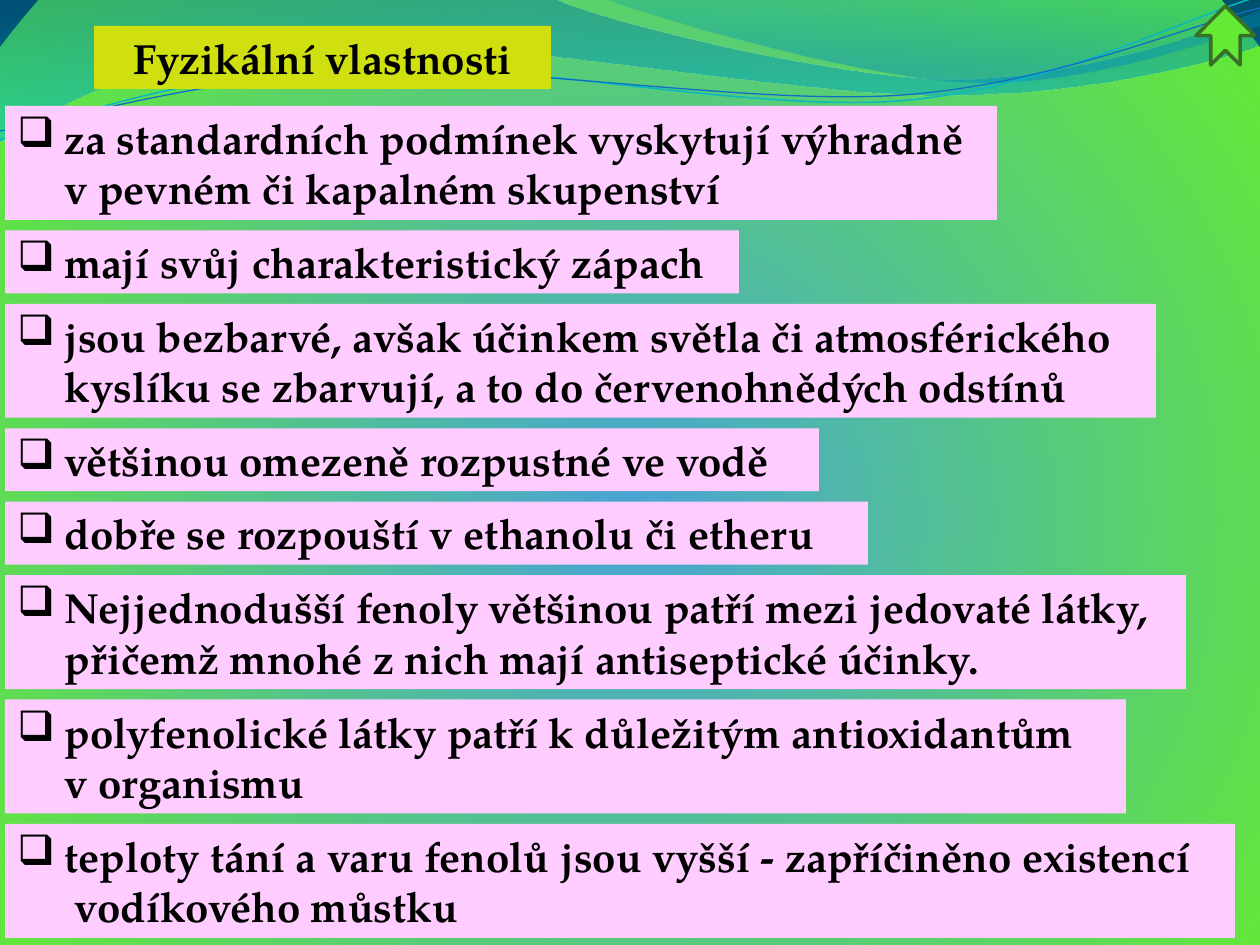
from typing import NamedTuple

from pptx import Presentation
from pptx.dml.color import RGBColor
from pptx.enum.shapes import MSO_SHAPE
from pptx.enum.text import MSO_ANCHOR, PP_ALIGN
from pptx.oxml import parse_xml
from pptx.oxml.ns import nsdecls, qn
from pptx.util import Pt

RECT, ARROW = MSO_SHAPE.RECTANGLE, MSO_SHAPE.NOTCHED_RIGHT_ARROW
LEFT, CENTER, MIDDLE = PP_ALIGN.LEFT, PP_ALIGN.CENTER, MSO_ANCHOR.MIDDLE
EMU_PER_PX = 914400 / 126
FONT, BULLET_FONT = "TeX Gyre Pagella", "OpenSymbol"
GREEN, PINK, YELLOW, BLACK = "64E935", "FFCCFF", "D0DF0F", "000000"
LIST_LEFT, LIST_TOP, LIST_BOTTOM = 5, 106, 938
LINE_HEIGHT, PADDING, INDENT = 51, 12, 47


class Stop(NamedTuple):
    position: int
    color: str
    opacity: int = 100


class Wave(NamedTuple):
    start: tuple
    segments: list  # one point is a straight line, three are a Bézier curve
    stops: tuple = ()
    line: str = ""
    weight: float = 0


class Property(NamedTuple):
    text: str
    width: int
    lines: int = 1

    @property
    def height(self) -> int:
        return self.lines * LINE_HEIGHT + PADDING


WAVES = [
    Wave((0, 0), [
        [(554, -1)],
        [(600, 21), (837, 79), (955, 79)],
        [(1075, 79), (1208, 33), (1260, 11)],
        [(1261, 45)],
        [(1239, 55), (1096, 96), (940, 95)],
        [(784, 95), (481, 35), (324, 43)],
        [(163, 45), (58, 105), (-1, 142)],
    ], stops=(Stop(0, "0074A1", 45), Stop(100, "00C6CF", 55))),
    Wave((604, -1), [
        [(641, 14), (859, 78), (969, 82)],
        [(1079, 87), (1211, 40), (1260, 26)],
        [(1260, 0)],
    ], stops=(Stop(0, "00A1A9", 30), Stop(80, "008BBF", 45))),
    Wave((0, 140), [
        [(60, 117), (199, 72), (349, 66)],
        [(498, 59), (747, 112), (898, 101)],
        [(1050, 89), (1182, 19), (1257, -3)],
    ], line="0AB8BF", weight=0.85),
    Wave((0, 131), [
        [(59, 121), (207, 77), (357, 71)],
        [(508, 64), (752, 106), (903, 95)],
        [(1053, 84), (1186, 26), (1260, 8)],
    ], line="0F6FC6", weight=0.75),
]

PROPERTIES = [
    Property("za standardních podmínek vyskytují výhradně \vv pevném či kapalném skupenství", 992, 2),
    Property("mají svůj charakteristický zápach", 734),
    Property("jsou bezbarvé, avšak účinkem světla či atmosférického "
             "kyslíku se zbarvují, a to do červenohnědých odstínů", 1151, 2),
    Property("většinou omezeně rozpustné ve vodě", 814),
    Property("dobře se rozpouští v ethanolu či etheru", 863),
    Property("Nejjednodušší fenoly většinou patří mezi jedovaté látky, "
             "přičemž mnohé z nich mají antiseptické účinky.", 1181, 2),
    Property("polyfenolické látky patří k důležitým antioxidantům \vv organismu", 1121, 2),
    Property("teploty tání a varu fenolů jsou vyšší - zapříčiněno existencí\v vodíkového můstku", 1230, 2),
]


def px(n: float) -> int:
    return round(n * EMU_PER_PX)


def rgb(color: str) -> RGBColor:
    return RGBColor.from_string(color)


def gradient(stops, direction: str):
    items = "".join(
        f'<a:gs pos="{g.position * 1000}"><a:srgbClr val="{g.color}">'
        f'<a:alpha val="{g.opacity * 1000}"/></a:srgbClr></a:gs>' for g in stops)
    return parse_xml(f'<a:gradFill {nsdecls("a")} rotWithShape="1">'
                     f'<a:gsLst>{items}</a:gsLst>{direction}</a:gradFill>')


def bend(sp, segments: list) -> None:
    """Turn the straight sides that have control points into Bézier curves."""
    sides = list(sp.element.iter(qn("a:lnTo")))
    for side, segment in zip(sides, segments):
        if len(segment) == 3:
            points = "".join(f'<a:pt x="{px(x) - sp.left}" y="{px(y) - sp.top}"/>' for x, y in segment)
            side.getparent().replace(side, parse_xml(
                f'<a:cubicBezTo {nsdecls("a")}>{points}</a:cubicBezTo>'))


def draw_wave(s, layout, wave: Wave) -> None:
    builder = s.shapes.build_freeform(*map(px, wave.start), scale=1.0)
    ends = [segment[-1] for segment in wave.segments]
    builder.add_line_segments([(px(x), px(y)) for x, y in ends], close=bool(wave.stops))
    sp = builder.convert_to_shape()
    bend(sp, wave.segments)
    sp.shadow.inherit = False
    if wave.stops:
        sp.line.fill.background()
        sp.fill.solid()
        solid = sp.element.spPr.find(qn("a:solidFill"))
        solid.getparent().replace(solid, gradient(wave.stops, '<a:lin ang="5400000" scaled="1"/>'))
    else:
        sp.fill.background()
        sp.line.color.rgb = rgb(wave.line)
        sp.line.width = Pt(wave.weight)
    layout.shapes.element.append(sp.element)


def place(sp, left: float, top: float, width: float, height: float) -> None:
    sp.left, sp.top, sp.width, sp.height = map(px, (left, top, width, height))


def write(sp, text: str, fill: str, align):
    sp.fill.solid()
    sp.fill.fore_color.rgb = rgb(fill)
    tf = sp.text_frame
    tf.word_wrap = True
    tf.vertical_anchor = MIDDLE
    p = tf.paragraphs[0]
    p.text = text
    p.alignment = align
    for r in p.runs:
        r.font.name, r.font.size, r.font.bold = FONT, Pt(24), True
        r.font.color.rgb = rgb(BLACK)
    return p


def draw_property(s, item: Property, top: float) -> None:
    sp = s.shapes.add_shape(RECT, 0, 0, 0, 0)
    place(sp, LIST_LEFT, top, item.width, item.height)
    sp.shadow.inherit = False
    sp.line.fill.background()
    p = write(sp, item.text, PINK, LEFT)
    pPr = p._p.get_or_add_pPr()
    pPr.set("marL", str(px(INDENT)))
    pPr.set("indent", str(-px(INDENT)))
    pPr.append(parse_xml(f'<a:buFont {nsdecls("a")} typeface="{BULLET_FONT}"/>'))
    pPr.append(parse_xml(f'<a:buChar {nsdecls("a")} char="❑"/>'))


def main() -> None:
    prs = Presentation()
    prs.slide_width, prs.slide_height = px(1260), px(945)
    layout = prs.slide_layouts[5]
    s = prs.slides.add_slide(layout)

    # Radial background, centred slightly below the middle
    s.background.fill.solid()
    bgPr = s.element.find(".//" + qn("p:bgPr"))
    stops = (Stop(0, "48A4D6"), Stop(100, GREEN), Stop(100, "003050"))
    bgPr.replace(bgPr[0], gradient(
        stops, '<a:path path="circle"><a:fillToRect l="50000" t="55000" r="50000" b="45000"/></a:path>'))

    # Waves belong to the layout
    for wave in WAVES:
        draw_wave(s, layout, wave)

    # Title
    title = s.shapes.title
    place(title, 94, 26, 457, 63)
    write(title, "Fyzikální vlastnosti", YELLOW, CENTER)

    # Stacked list of properties with equal gaps
    free = LIST_BOTTOM - LIST_TOP - sum(item.height for item in PROPERTIES)
    gap = free / (len(PROPERTIES) - 1)
    top = LIST_TOP
    for item in PROPERTIES:
        draw_property(s, item, top)
        top += item.height + gap

    # Upward arrow
    arrow = s.shapes.add_shape(ARROW, 0, 0, 0, 0)
    place(arrow, 1196, 6, 59, 59)
    arrow.rotation = 270
    arrow.shadow.inherit = False
    arrow.fill.solid()
    arrow.fill.fore_color.rgb = rgb(GREEN)
    arrow.line.color.rgb = rgb("387026")
    arrow.line.width = Pt(2)

    prs.save("out.pptx")


if __name__ == "__main__":
    main()
